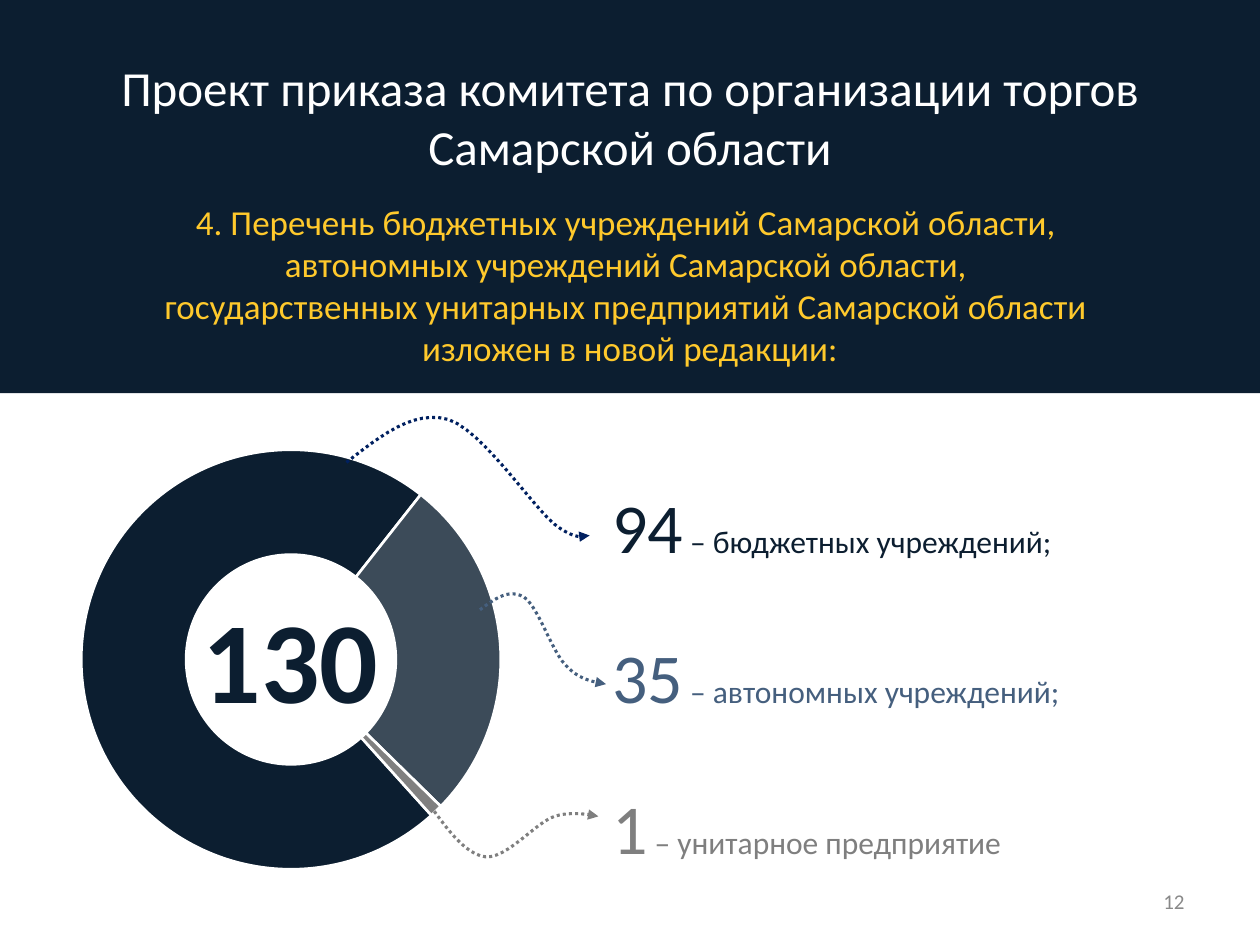
from dataclasses import dataclass

from lxml import etree
from pptx import Presentation
from pptx.chart.data import CategoryChartData
from pptx.dml.color import RGBColor
from pptx.enum.chart import XL_CHART_TYPE
from pptx.enum.dml import MSO_LINE
from pptx.enum.shapes import MSO_SHAPE
from pptx.enum.text import MSO_ANCHOR, PP_ALIGN
from pptx.oxml import parse_xml
from pptx.oxml.ns import nsdecls, qn
from pptx.util import Inches, Pt

DOUGHNUT = XL_CHART_TYPE.DOUGHNUT
DOTTED = MSO_LINE.ROUND_DOT
RECTANGLE = MSO_SHAPE.RECTANGLE
TOP, MIDDLE = MSO_ANCHOR.TOP, MSO_ANCHOR.MIDDLE
LEFT, CENTER, RIGHT, JUSTIFY = PP_ALIGN.LEFT, PP_ALIGN.CENTER, PP_ALIGN.RIGHT, PP_ALIGN.JUSTIFY

Point = tuple[float, float]
Box = tuple[float, float, float, float]


@dataclass(frozen=True)
class Theme:
    font: str = "Calibri"
    navy: str = "0C1E30"
    white: str = "FFFFFF"
    yellow: str = "FFC92C"
    blue: str = "455F7E"
    arrow_navy: str = "002060"
    gray: str = "7F7F7F"
    slice_gray: str = "808080"
    page_gray: str = "898989"
    title_size: int = 28
    subtitle_size: int = 20
    total_size: int = 66
    number_size: int = 40
    label_size: int = 18
    page_size: int = 12
    chart_size: int = 10


@dataclass(frozen=True)
class Callout:
    number: str
    label: str
    box: Box
    color: str
    arrow_color: str
    curve: list[Point]  # start point, then three points for each Bezier segment


THEME = Theme()
CALLOUTS = [
    Callout("94", " – бюджетных учреждений;", (4.76, 3.79, 3.73, 0.77), THEME.navy, THEME.arrow_navy,
            [(2.75, 3.67), (3.02, 3.46), (3.28, 3.25), (3.56, 3.33), (3.83, 3.42),
             (4.21, 4), (4.4, 4.16), (4.59, 4.31), (4.68, 4.25), (4.68, 4.25)]),
    Callout("35", " – автономных учреждений;", (4.76, 4.98, 5, 0.77), THEME.blue, THEME.blue,
            [(3.81, 4.84), (3.93, 4.75), (4.04, 4.67), (4.16, 4.74), (4.27, 4.81),
             (4.38, 5.17), (4.49, 5.28), (4.6, 5.4), (4.71, 5.41), (4.81, 5.43)]),
    Callout("1", " – унитарное предприятие", (4.76, 6.18, 3.33, 0.77), THEME.gray, THEME.gray,
            [(3.39, 6.36), (3.54, 6.57), (3.69, 6.78), (3.85, 6.8), (4.02, 6.82),
             (4.25, 6.53), (4.4, 6.48), (4.55, 6.43), (4.75, 6.48), (4.75, 6.48)]),
]


def inches(values: tuple[float, ...]) -> list[int]:
    return [Inches(value) for value in values]


def format_run(run, size: int, color: str, bold: bool = False) -> None:
    for name, value in {"name": THEME.font, "size": Pt(size), "bold": bold}.items():
        setattr(run.font, name, value)
    run.font.color.rgb = RGBColor.from_string(color)


def write_text(shape, text: str, size: int, color: str, align=CENTER, anchor=TOP, bold: bool = False):
    frame = shape.text_frame
    for name, value in {"word_wrap": True, "vertical_anchor": anchor}.items():
        setattr(frame, name, value)
    paragraph = frame.paragraphs[0]
    paragraph.text = text
    paragraph.alignment = align
    for run in paragraph.runs:
        format_run(run, size, color, bold)
    return paragraph


def add_text(slide, box: Box, text: str, size: int, color: str, **options):
    return write_text(slide.shapes.add_textbox(*inches(box)), text, size, color, **options)


def add_banner(slide) -> None:
    banner = slide.shapes.add_shape(RECTANGLE, *inches((0, 0, 10, 3.12)))
    banner.shadow.inherit = False
    banner.fill.solid()
    banner.fill.fore_color.rgb = RGBColor.from_string(THEME.navy)
    banner.line.fill.background()
    # The banner lies behind the title placeholder
    slide.shapes.title.element.addprevious(banner.element)


def add_doughnut(slide) -> None:
    data = CategoryChartData()
    data.categories = ["1", "2", "3"]
    data.add_series("Series 1", (73, 27, 1))
    chart = slide.shapes.add_chart(DOUGHNUT, *inches((0.5, 3.36, 3.62, 3.75)), data).chart
    for name, value in {"has_legend": False, "has_title": False}.items():
        setattr(chart, name, value)
    chart.font.name, chart.font.size = THEME.font, Pt(THEME.chart_size)
    plot = chart.plots[0]
    plot.has_data_labels = False
    plot.vary_by_categories = True
    for index, color in enumerate((THEME.navy, THEME.navy, THEME.slice_gray)):
        slice_format = plot.series[0].points[index].format
        slice_format.fill.solid()
        slice_format.fill.fore_color.rgb = RGBColor.from_string(color)
        slice_format.line.color.rgb = RGBColor.from_string(THEME.white)
        slice_format.line.width = Pt(1.5)

    # The second slice is a lighter tint through 80 % opacity
    fills = list(plot.series[0]._element.iter(qn("a:solidFill")))
    slice_colors = [fill[0] for fill in fills if fill.getparent().tag == qn("c:spPr")]
    etree.SubElement(slice_colors[1], qn("a:alpha"), val="80000")

    # Rotation, hole and plot position
    doughnut = chart._chartSpace.find(".//" + qn("c:doughnutChart"))
    for tag, value in {"c:firstSliceAng": "138", "c:holeSize": "66"}.items():
        node = doughnut.find(qn(tag))
        if node is None:
            node = etree.SubElement(doughnut, qn(tag))
        node.set("val", value)
    plot_area = doughnut.getparent()
    for layout in plot_area.findall(qn("c:layout")):
        plot_area.remove(layout)
    plot_area.insert(0, parse_xml(
        f'<c:layout {nsdecls("c")}><c:manualLayout><c:layoutTarget val="inner"/>'
        '<c:xMode val="edge"/><c:yMode val="edge"/><c:x val="0.04"/><c:y val="0.05"/>'
        '<c:w val="0.92"/><c:h val="0.9"/></c:manualLayout></c:layout>'))


def bezier_points(curve: list[Point], steps: int = 12) -> list[Point]:
    points = []
    for first in range(0, len(curve) - 1, 3):
        controls = curve[first:first + 4]
        for step in range(1, steps + 1):
            t = step / steps
            weights = ((1 - t) ** 3, 3 * t * (1 - t) ** 2, 3 * t ** 2 * (1 - t), t ** 3)
            points.append(tuple(sum(weight * control[axis] for weight, control in zip(weights, controls))
                                for axis in (0, 1)))
    return points


def add_curved_arrow(slide, curve: list[Point], color: str) -> None:
    builder = slide.shapes.build_freeform(*inches(curve[0]))
    builder.add_line_segments([inches(point) for point in bezier_points(curve)], close=False)
    arrow = builder.convert_to_shape()
    arrow.shadow.inherit = False
    arrow.fill.background()
    arrow.line.color.rgb = RGBColor.from_string(color)
    for name, value in {"width": Pt(1.75), "dash_style": DOTTED}.items():
        setattr(arrow.line, name, value)
    etree.SubElement(arrow.line._get_or_add_ln(), qn("a:tailEnd"), type="triangle")


def add_callout(slide, callout: Callout) -> None:
    paragraph = add_text(slide, callout.box, callout.number, THEME.number_size, callout.color, align=JUSTIFY)
    label = paragraph.add_run()
    label.text = callout.label
    format_run(label, THEME.label_size, callout.color)
    add_curved_arrow(slide, callout.curve, callout.arrow_color)


def main() -> None:
    presentation = Presentation()
    presentation.slide_width, presentation.slide_height = inches((10, 7.5))
    slide = presentation.slides.add_slide(presentation.slide_layouts[5])

    # Heading
    add_banner(slide)
    title = slide.shapes.title
    title.left, title.top, title.width, title.height = inches((0.5, 0.3, 9, 1.25))
    write_text(title, "Проект приказа комитета по организации торгов Самарской области",
               THEME.title_size, THEME.white, anchor=MIDDLE)
    subtitle = add_text(slide, (0.5, 1.54, 9, 1.53),
                        "4. Перечень бюджетных учреждений Самарской области, \n"
                        "автономных учреждений Самарской области, \n"
                        "государственных унитарных предприятий Самарской области \n"
                        "изложен в новой редакции:", THEME.subtitle_size, THEME.yellow)
    subtitle.space_before = Pt(4)

    # Chart with its total and callouts
    add_doughnut(slide)
    add_text(slide, (1.51, 4.62, 1.61, 1.21), "130", THEME.total_size, THEME.navy, align=LEFT, bold=True)
    for callout in CALLOUTS:
        add_callout(slide, callout)

    # Page number
    add_text(slide, (7.17, 6.95, 2.33, 0.4), "12", THEME.page_size, THEME.page_gray, align=RIGHT, anchor=MIDDLE)
    presentation.save("out.pptx")


if __name__ == "__main__":
    main()
